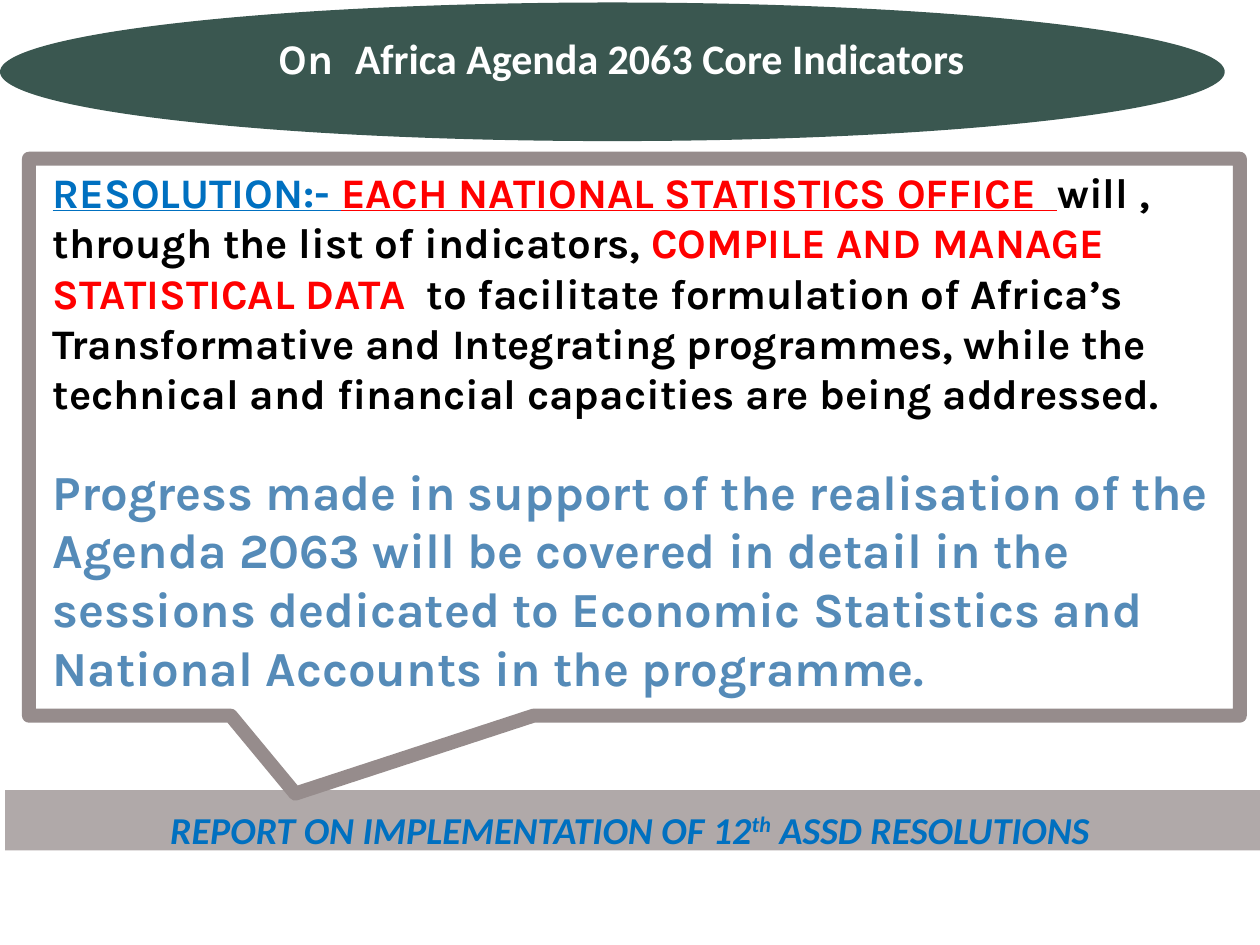
from pptx import Presentation
from pptx.dml.color import RGBColor
from pptx.enum import shapes, text
from pptx.util import Inches, Pt

HUES = {"band": "B0A9A9", "frame": "968C8C", "oval": "3A5750", "blue": "0070C0",
        "red": "FF0000", "black": "000000", "white": "FFFFFF", "steel": "558BB8"}
KIND = shapes.MSO_SHAPE
LEFT, MID = text.PP_ALIGN.LEFT, text.PP_ALIGN.CENTER

# Each run: words, colour, font format, baseline shift
foot_font = {"name": "Calibri", "size": Pt(21.7), "bold": True, "italic": True}
body_font = {"name": "Karla", "size": Pt(24), "bold": True}
under = {**body_font, "underline": True}
FOOT = [("REPORT ON IMPLEMENTATION OF 12", "blue", foot_font, 0),
        ("th", "blue", foot_font, 30000),
        (" ASSD RESOLUTIONS", "blue", foot_font, 0)]
GOAL = [("RESOLUTION:- ", "blue", under, 0),
        ("EACH NATIONAL STATISTICS OFFICE  ", "red", under, 0),
        ("will , through the list of indicators, ", "black", body_font, 0),
        ("COMPILE AND MANAGE STATISTICAL DATA  ", "red", body_font, 0),
        ("to facilitate formulation of Africa’s Transformative and Integrating "
         "programmes, while the technical and financial capacities are being "
         "addressed.", "black", body_font, 0)]
TITLE = [("On  ", "white", body_font, 0),
         ("Africa Agenda 2063 Core Indicators", "white",
          {**body_font, "name": "Calibri"}, 0)]
NEWS = [("Progress made in support of the realisation of the Agenda 2063 will be "
         "covered in detail in the sessions dedicated to Economic Statistics and "
         "National Accounts in the programme.", "steel",
         {**body_font, "size": Pt(28)}, 0)]

# Back to front: kind of shape (None for text), place, fill or alignment, runs
PARTS = [
    (KIND.RECTANGLE, (0.04, 6.27, 10, 0.48), "band", None),
    (None, (0, 6.35, 10, 0.39), MID, FOOT),
    (KIND.RECTANGULAR_CALLOUT, (0.23, 1.26, 9.61, 4.42), None, None),
    (None, (0.32, 1.27, 9.53, 2.12), LEFT, GOAL),
    (KIND.OVAL, (0, 0.02, 9.72, 1.1), "oval", None),
    (None, (0.76, 0.21, 8.35, 0.5), MID, TITLE),
    (None, (0.32, 3.61, 9.53, 1.97), LEFT, NEWS),
]


def hue(name):
    return RGBColor.from_string(HUES[name])


def draw(slide, kind, place, fill):
    shape = slide.shapes.add_shape(kind, *map(Inches, place))
    shape.shadow.inherit = False
    if fill:
        shape.fill.solid()
        shape.fill.fore_color.rgb = hue(fill)
        shape.line.fill.background()
    else:
        shape.fill.background()
        shape.line.color.rgb = hue("frame")
        shape.line.width = Pt(8)
        shape.adjustments[0] = -0.28
        shape.adjustments[1] = 0.64


def write(slide, place, align, runs):
    frame = slide.shapes.add_textbox(*map(Inches, place)).text_frame
    frame.word_wrap = True
    para = frame.paragraphs[0]
    para.alignment = align
    for words, tint, style, shift in runs:
        run = para.add_run()
        run.text = words
        run.font.color.rgb = hue(tint)
        for key, value in style.items():
            setattr(run.font, key, value)
        if shift:
            run.font._element.set("baseline", str(shift))


def main():
    deck = Presentation()
    deck.slide_width, deck.slide_height = Inches(10), Inches(7.5)
    slide = deck.slides.add_slide(deck.slide_layouts[6])
    for kind, place, look, runs in PARTS:
        if runs:
            write(slide, place, look, runs)
        else:
            draw(slide, kind, place, look)
    deck.save("out.pptx")


if __name__ == "__main__":
    main()
